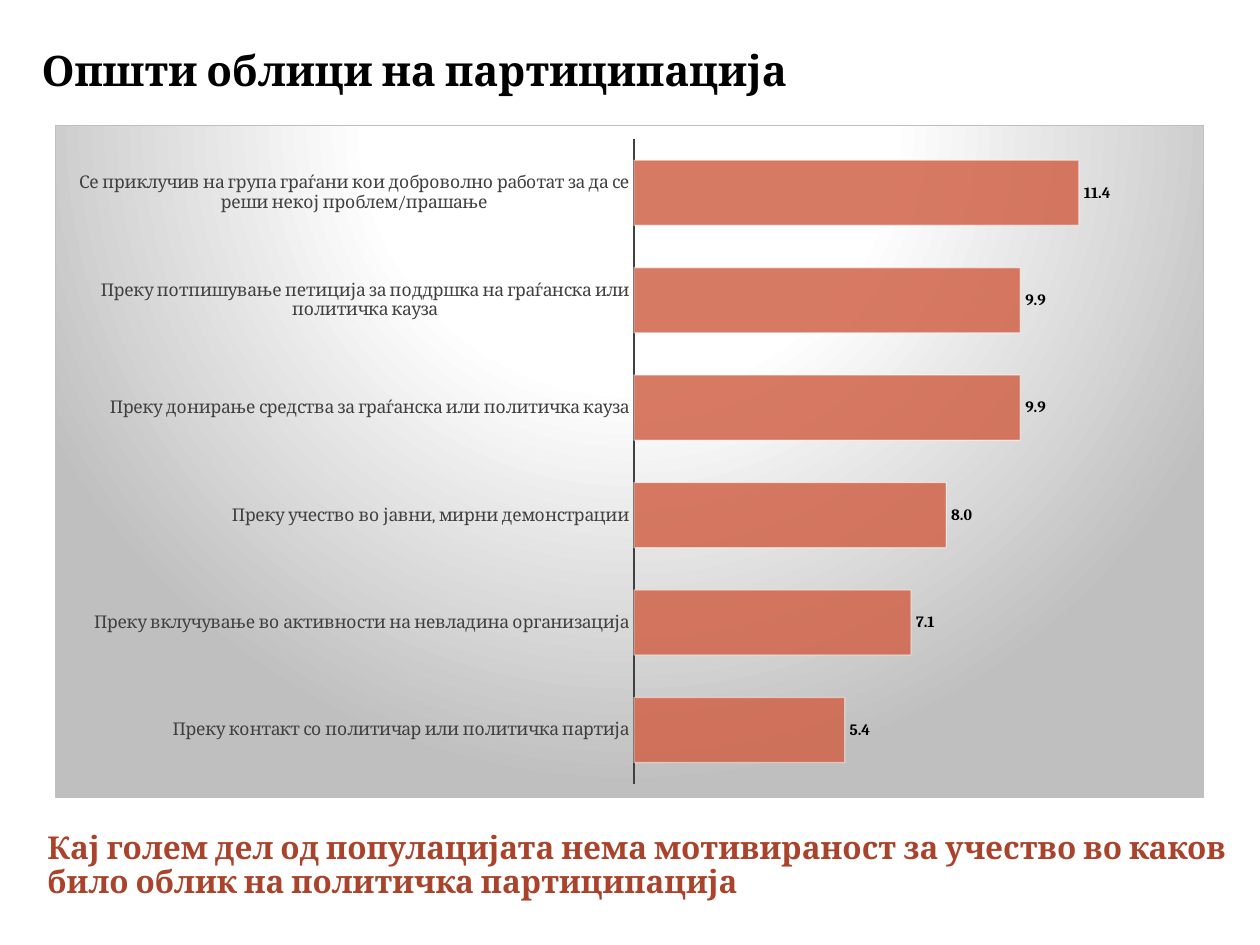
import pptx
import pptx.chart.data
import pptx.dml.color
import pptx.enum.chart
import pptx.enum.text
import pptx.oxml
import pptx.util

FONT = "Cambria"
DRAWING_NS = "http://schemas.openxmlformats.org/drawingml/2006/main"
CHART_NS = "http://schemas.openxmlformats.org/drawingml/2006/chart"
NAMESPACES = f'xmlns:a="{DRAWING_NS}" xmlns:c="{CHART_NS}"'


def px(length):
    """Turn pixels (126 to the inch) into EMU."""
    return round(length * 914400 / 126)


def style_font(font, size, color, bold=False):
    font.name = FONT
    font.size = pptx.util.Pt(size)
    font.bold = bold
    font.color.rgb = pptx.dml.color.RGBColor.from_string(color)


presentation = pptx.Presentation()
presentation.slide_width = px(1260)
presentation.slide_height = px(945)
slide = presentation.slides.add_slide(presentation.slide_layouts[5])

# Title and conclusion
title = slide.shapes.title
title.left, title.top, title.width, title.height = px(29), px(10), px(1202), px(126)
conclusion = slide.shapes.add_textbox(px(35), px(803), px(1218), px(126))
for shape, text, size, color in (
    (title, "Општи облици на партиципација", 24, "000000"),
    (conclusion, "Кај голем дел од популацијата нема мотивираност за учество во каков "
                 "било облик на политичка партиципација", 18, "A9432B"),
):
    frame = shape.text_frame
    frame.text = text
    frame.word_wrap = True
    frame.vertical_anchor = pptx.enum.text.MSO_ANCHOR.MIDDLE
    paragraph = frame.paragraphs[0]
    paragraph.alignment = pptx.enum.text.PP_ALIGN.LEFT
    paragraph.line_spacing = 0.9
    style_font(paragraph.font, size, color, bold=True)

# Bar chart, listed from the bottom bar up
participation = {
    "Преку контакт со политичар или политичка партија": 5.4,
    "Преку вклучување во активности на невладина организација": 7.1,
    "Преку учество во јавни, мирни демонстрации": 8.0,
    "Преку донирање средства за граѓанска или политичка кауза": 9.9,
    "Преку потпишување петиција за поддршка на граѓанска или политичка кауза": 9.9,
    "Се приклучив на група граѓани кои доброволно работат за да се реши некој проблем/прашање": 11.4,
}
chart_data = pptx.chart.data.CategoryChartData(number_format="0.0")
chart_data.categories = list(participation)
chart_data.add_series("Series 1", list(participation.values()))
chart = slide.shapes.add_chart(
    pptx.enum.chart.XL_CHART_TYPE.BAR_CLUSTERED,
    px(55), px(125), px(1149), px(673), chart_data,
).chart
chart.has_legend = False
chart.has_title = False
style_font(chart.font, 10, "000000")

category_axis = chart.category_axis
category_axis.major_tick_mark = pptx.enum.chart.XL_TICK_MARK.NONE
category_axis.has_major_gridlines = False
category_axis.format.line.width = pptx.util.Pt(1.5)
category_axis.format.line.color.rgb = pptx.dml.color.RGBColor.from_string("404040")
style_font(category_axis.tick_labels.font, 10, "404040")

value_axis = chart.value_axis
value_axis.visible = False
value_axis.has_major_gridlines = False
value_axis.minimum_scale = 0
value_axis.maximum_scale = 14

plot = chart.plots[0]
plot.gap_width = 65
plot.vary_by_categories = False
plot.has_data_labels = True
labels = plot.data_labels
labels.show_value = True
labels.position = pptx.enum.chart.XL_LABEL_POSITION.OUTSIDE_END
labels.number_format = "0.0"
labels.number_format_is_linked = False
style_font(labels.font, 9, "000000", bold=True)

bars = plot.series[0].format
bars.fill.solid()
bars.fill.fore_color.rgb = pptx.dml.color.RGBColor.from_string("D16349")
bars.line.width = pptx.util.Pt(0.75)
bars.line.color.rgb = pptx.dml.color.RGBColor.from_string("FFFFFF")

# Transparency of bar fill and outline, in document order
bar_colors = plot.series[0]._element.spPr.iter(f"{{{DRAWING_NS}}}srgbClr")
for color, opacity in zip(bar_colors, (85, 50)):
    color.append(pptx.oxml.parse_xml(f'<a:alpha {NAMESPACES} val="{opacity * 1000}"/>'))

# Radial background and border of the chart
stops = "".join(
    f'<a:gs pos="{position * 1000}"><a:srgbClr val="{color}"/></a:gs>'
    for position, color in ((0, "FFFFFF"), (39, "FFFFFF"), (100, "BFBFBF"))
)
background = pptx.oxml.parse_xml(
    f'<c:spPr {NAMESPACES}><a:gradFill><a:gsLst>{stops}</a:gsLst><a:path path="circle">'
    '<a:fillToRect l="50000" t="-80000" r="50000" b="180000"/></a:path></a:gradFill>'
    '<a:ln w="9525"><a:solidFill><a:srgbClr val="BFBFBF"/></a:solidFill></a:ln></c:spPr>'
)
chart_element = chart._chartSpace.chart
chart_element.addnext(background)

# Position of the plot inside the chart
plot_area = chart_element.plotArea
for old_layout in plot_area.findall(f"{{{CHART_NS}}}layout"):
    plot_area.remove(old_layout)
bounds = "".join(
    f'<c:{name} val="{value}"/>'
    for name, value in (("x", 0.504), ("y", 0.02), ("w", 0.476), ("h", 0.96))
)
plot_area.insert(0, pptx.oxml.parse_xml(
    f'<c:layout {NAMESPACES}><c:manualLayout><c:layoutTarget val="inner"/>'
    f'<c:xMode val="edge"/><c:yMode val="edge"/>{bounds}</c:manualLayout></c:layout>'
))

presentation.save("out.pptx")
